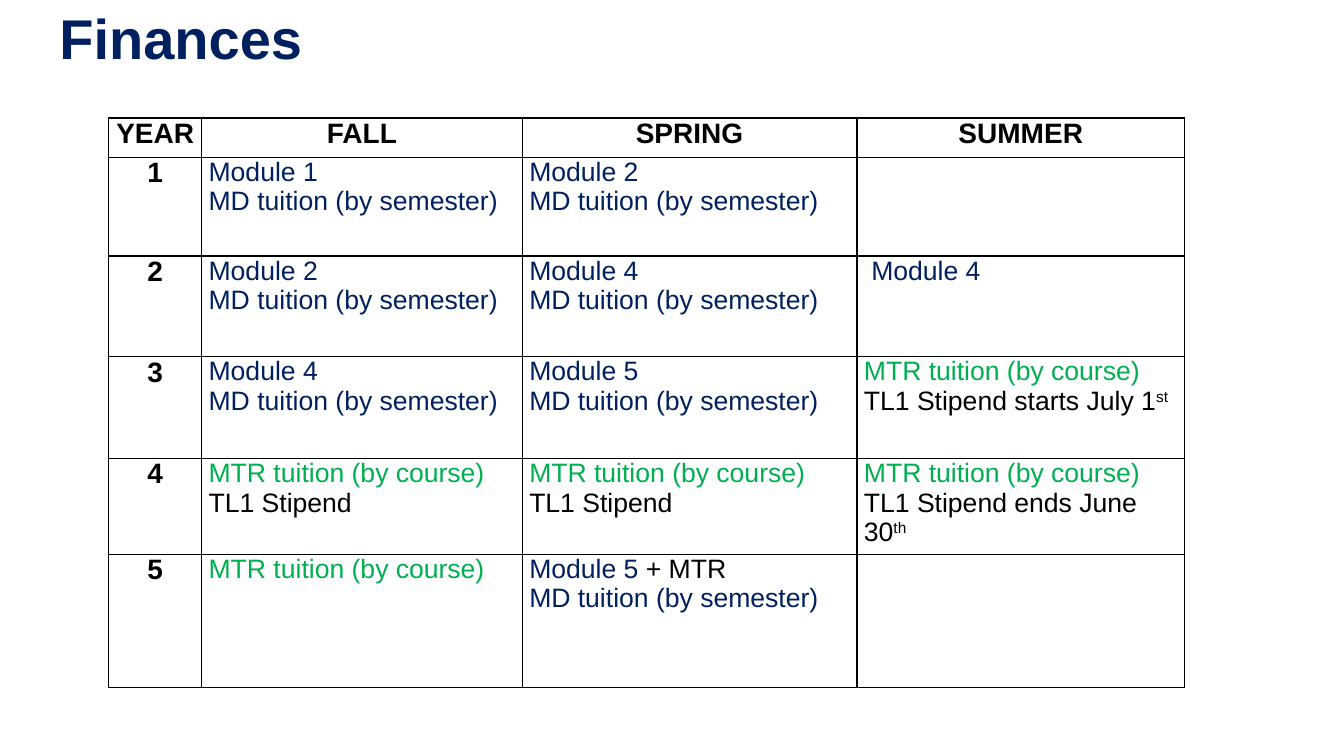
from lxml import etree
from pptx import Presentation
from pptx.dml.color import RGBColor
from pptx.enum.text import MSO_ANCHOR, PP_ALIGN
from pptx.oxml.ns import qn
from pptx.util import Inches, Pt

NAVY = RGBColor(0x00, 0x20, 0x60)
GREEN = RGBColor(0x00, 0xB0, 0x50)
BLACK = RGBColor(0x00, 0x00, 0x00)
WHITE = RGBColor(0xFF, 0xFF, 0xFF)
CENTER, LEFT, TOP = PP_ALIGN.CENTER, PP_ALIGN.LEFT, MSO_ANCHOR.TOP

COLUMN_WIDTHS = [0.92, 3.18, 3.32, 3.25]
ROW_HEIGHTS = [0.39, 0.98, 1, 1.01, 0.88, 1.32]
BORDER_SIDES = ["a:lnL", "a:lnR", "a:lnT", "a:lnB"]

# A cell is a list of lines, and a line is a list of (text, colour, superscript) runs.
MD_LINE = [("MD tuition (by semester)", NAVY, False)]
MTR_LINE = [("MTR tuition (by course)", GREEN, False)]
STIPEND_LINE = [("TL1 Stipend", BLACK, False)]
STIPEND_START = [("TL1 Stipend starts July 1", BLACK, False), ("st", BLACK, True)]
STIPEND_END = [("TL1 Stipend ends June 30", BLACK, False), ("th", BLACK, True)]
MODULE_1, MODULE_2, MODULE_4, MODULE_5 = (
    [(f"Module {number}", NAVY, False)] for number in (1, 2, 4, 5))
SUMMER_MODULE_4 = [(" Module 4", NAVY, False)]
MODULE_5_MTR = [("Module 5 ", NAVY, False), ("+ MTR", BLACK, False)]

HEADINGS = ["YEAR", "FALL", "SPRING", "SUMMER"]
YEARS = [
    [[MODULE_1, MD_LINE], [MODULE_2, MD_LINE], []],
    [[MODULE_2, MD_LINE], [MODULE_4, MD_LINE], [SUMMER_MODULE_4]],
    [[MODULE_4, MD_LINE], [MODULE_5, MD_LINE], [MTR_LINE, STIPEND_START]],
    [[MTR_LINE, STIPEND_LINE], [MTR_LINE, STIPEND_LINE], [MTR_LINE, STIPEND_END]],
    [[MTR_LINE], [MODULE_5_MTR, MD_LINE], []],
]


def add_run(paragraph, text, size, color, bold):
    run = paragraph.add_run()
    run.text = text
    font_format = {"name": "Arial", "size": Pt(size), "bold": bold}
    for name, value in font_format.items():
        setattr(run.font, name, value)
    run.font.color.rgb = color
    return run


def format_cell(cell):
    """Give the cell its margins, black borders and white fill."""
    cell_format = {"margin_left": Inches(0.07), "margin_right": Inches(0.07),
                   "margin_top": 0, "margin_bottom": 0, "vertical_anchor": TOP}
    for name, value in cell_format.items():
        setattr(cell, name, value)
    properties = cell._tc.get_or_add_tcPr()
    for side in BORDER_SIDES:
        line = etree.SubElement(properties, qn(side), w=str(Pt(1)))
        fill = etree.SubElement(line, qn("a:solidFill"))
        etree.SubElement(fill, qn("a:srgbClr"), val=str(BLACK))
    cell.fill.solid()
    cell.fill.fore_color.rgb = WHITE


presentation = Presentation()
presentation.slide_width = Inches(13.33)
presentation.slide_height = Inches(7.5)
slide = presentation.slides.add_slide(presentation.slide_layouts[6])

# Title
title = slide.shapes.add_textbox(Inches(0.59), Inches(0.11), Inches(12), Inches(1.25))
title_format = {"margin_left": 0, "margin_right": 0, "margin_top": 0,
                "margin_bottom": 0, "word_wrap": True, "vertical_anchor": TOP}
for name, value in title_format.items():
    setattr(title.text_frame, name, value)
title_paragraph = title.text_frame.paragraphs[0]
title_paragraph.line_spacing = 0.9
add_run(title_paragraph, "Finances", 40, NAVY, True)

# Table grid
table = slide.shapes.add_table(
    len(ROW_HEIGHTS), len(COLUMN_WIDTHS), Inches(1.08), Inches(1.17),
    Inches(sum(COLUMN_WIDTHS)), Inches(sum(ROW_HEIGHTS))).table
table.first_row = False
table.horz_banding = False
for column, width in zip(table.columns, COLUMN_WIDTHS):
    column.width = Inches(width)
for row, height in zip(table.rows, ROW_HEIGHTS):
    row.height = Inches(height)
for cell in table.iter_cells():
    format_cell(cell)

# Headings and year numbers
labels = [(0, column, heading) for column, heading in enumerate(HEADINGS)]
labels += [(year, 0, str(year)) for year in range(1, len(YEARS) + 1)]
for row, column, label in labels:
    paragraph = table.cell(row, column).text_frame.paragraphs[0]
    paragraph.alignment = CENTER
    add_run(paragraph, label, 20, BLACK, True)

# Semester entries
for row, semesters in enumerate(YEARS, start=1):
    for column, lines in enumerate(semesters, start=1):
        text_frame = table.cell(row, column).text_frame
        for index, line in enumerate(lines):
            paragraph = text_frame.add_paragraph() if index else text_frame.paragraphs[0]
            paragraph.alignment = LEFT
            for text, color, superscript in line:
                run = add_run(paragraph, text, 19, color, False)
                if superscript:
                    run.font._element.set("baseline", "30000")

presentation.save("out.pptx")
